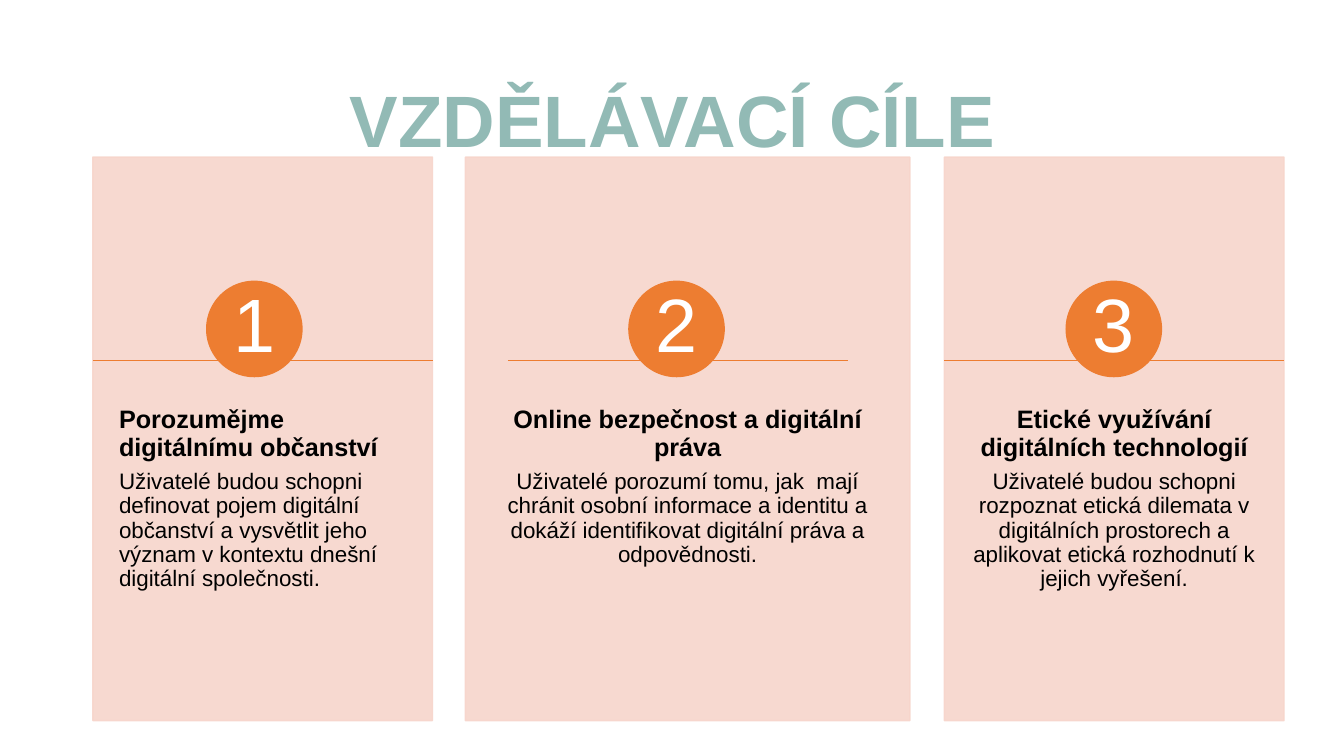
import pptx
import pptx.util
import pptx.dml.color
import pptx.enum.shapes
import pptx.enum.text
import pptx.oxml.ns
import lxml.etree

Cm, Pt = pptx.util.Cm, pptx.util.Pt
SHAPE = pptx.enum.shapes.MSO_SHAPE
ALIGN = pptx.enum.text.PP_ALIGN
ANCHOR = pptx.enum.text.MSO_ANCHOR
qn = pptx.oxml.ns.qn
color = pptx.dml.color.RGBColor.from_string

PEACH, ORANGE, TEAL = "F7D5CB", "ED7D31", "92BAB5"

prs = pptx.Presentation()
prs.slide_width, prs.slide_height = Cm(33.87), Cm(19.05)
slide = prs.slides.add_slide(prs.slide_layouts[6])


def add_text(*paragraphs, box, inset, align=ALIGN.CENTER, anchor=ANCHOR.MIDDLE, space=0):
    """Each paragraph is (text, size, bold, colour); space separates them."""
    frame = slide.shapes.add_textbox(*map(Cm, box)).text_frame
    frame.word_wrap = True
    frame.vertical_anchor = anchor
    frame.margin_left = frame.margin_right = Cm(inset[0])
    frame.margin_top = frame.margin_bottom = Cm(inset[1])
    for index, (text, size, bold, hex_color) in enumerate(paragraphs):
        paragraph = frame.add_paragraph() if index else frame.paragraphs[0]
        paragraph.alignment = align
        paragraph.line_spacing = 0.9
        paragraph.space_before = Pt(space if index else 0)
        run = paragraph.add_run()
        run.text = text
        run.font.name, run.font.size, run.font.bold = "Arial", Pt(size), bold
        run.font.color.rgb = color(hex_color)


def add_filled(kind, box, hex_color, opacity=100):
    shape = slide.shapes.add_shape(kind, *map(Cm, box))
    shape.shadow.inherit = False
    shape.fill.solid()
    shape.fill.fore_color.rgb = shape.line.color.rgb = color(hex_color)
    shape.line.width = Pt(1)
    if opacity < 100:
        for srgb in shape.fill._xPr.iter(qn("a:srgbClr")):
            lxml.etree.SubElement(srgb, qn("a:alpha"), val=str(opacity * 1000))


add_text(("VZDĚLÁVACÍ CÍLE", 52, True, TEAL), box=(2.34, 1.55, 29.21, 3.15), inset=(0.25, 0.13))

# card left, card width, circle left, rule left, alignment, heading, description
goals = [
    (2.34, 8.56, 5.21, 2.34, ALIGN.LEFT, "Porozumějme digitálnímu občanství",
     "Uživatelé budou schopni definovat pojem digitální občanství a vysvětlit "
     "jeho význam v kontextu dnešní digitální společnosti."),
    (11.73, 11.2, 15.85, 12.8, ALIGN.CENTER, "Online bezpečnost a digitální práva",
     "Uživatelé porozumí tomu, jak  mají chránit osobní informace a identitu a "
     "dokáží identifikovat digitální práva a odpovědnosti."),
    (23.8, 8.56, 26.87, 23.8, ALIGN.CENTER, "Etické využívání digitálních technologií",
     "Uživatelé budou schopni rozpoznat etická dilemata v digitálních prostorech a "
     "aplikovat etická rozhodnutí k jejich vyřešení."),
]
RULE_Y, RULE_WIDTH = 9.09, 8.56

for number, (left, width, circle, rule_left, align, heading, description) in enumerate(goals, 1):
    add_filled(SHAPE.RECTANGLE, (left, 3.96, width, 14.2), PEACH, opacity=90)
    add_text((heading, 18, True, "000000"), (description, 16, False, "000000"),
             box=(left, 9.35, width, 8.51), inset=(0.66, 0.91),
             align=align, anchor=ANCHOR.TOP, space=6.3)
    add_filled(SHAPE.OVAL, (circle, 7.09, 2.4, 2.4), ORANGE)
    add_text((str(number), 54, False, "FFFFFF"),
             box=(circle + 0.35, 7.42, 1.7, 1.7), inset=(0.18, 0.03))
    rule = slide.shapes.add_connector(
        pptx.enum.shapes.MSO_CONNECTOR.STRAIGHT,
        Cm(rule_left), Cm(RULE_Y), Cm(rule_left + RULE_WIDTH), Cm(RULE_Y))
    rule.line.color.rgb = color(ORANGE)
    rule.line.width = Pt(1)
    lxml.etree.SubElement(rule._element.spPr, qn("a:effectLst"))

prs.save("out.pptx")
